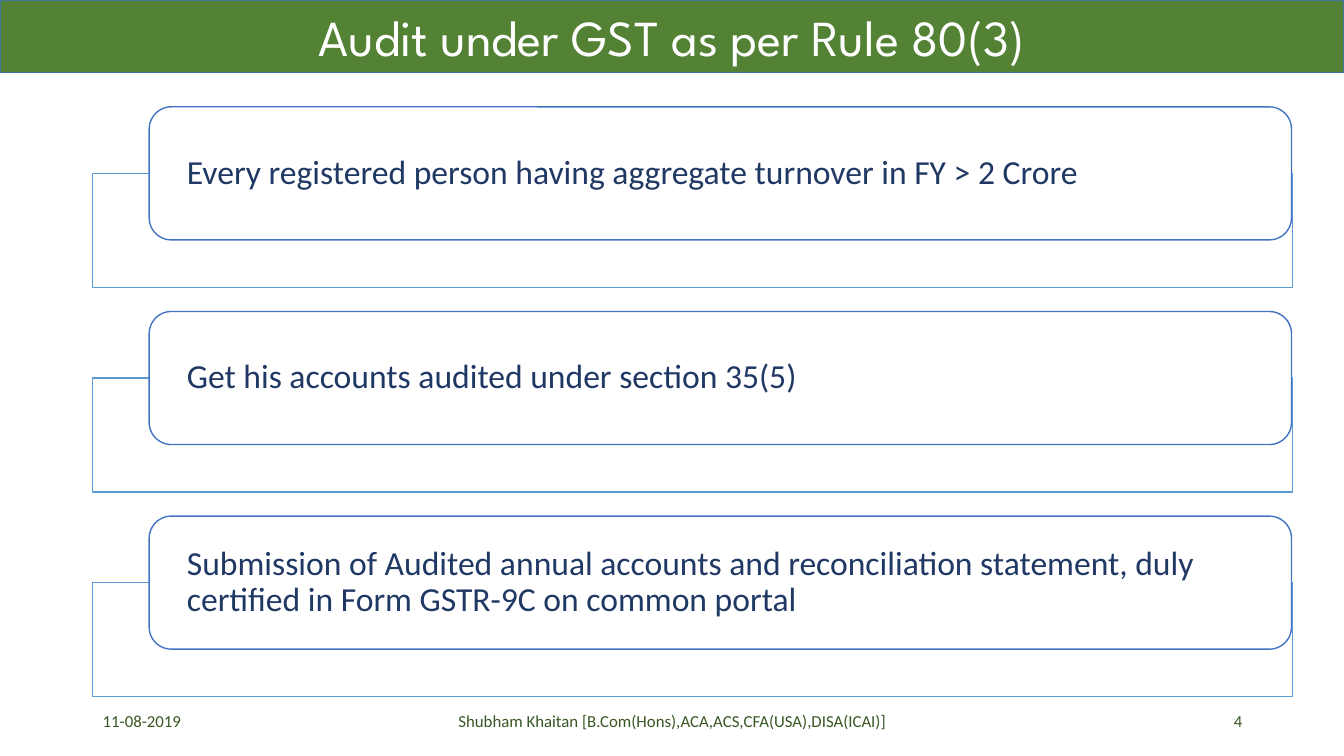
"""Build the slide on audit under GST as per Rule 80(3)."""
from dataclasses import dataclass

from lxml.etree import SubElement
from pptx import Presentation
from pptx.dml.color import RGBColor
from pptx.enum.shapes import MSO_SHAPE
from pptx.enum.text import MSO_ANCHOR, PP_ALIGN
from pptx.oxml.ns import qn
from pptx.shapes.autoshape import Shape
from pptx.slide import Slide
from pptx.util import Inches, Pt

COLOURS = {
    "white": "FFFFFF",
    "banner": "548235",
    "banner_line": "43739E",
    "frame_line": "5B9BD5",
    "card_line": "4472C4",
    "card_text": "203864",
    "footer_text": "385723",
}
CARD_TOP = 1.06
CARD_PITCH = 2.03
FRAME_DROP = 0.66
REQUIREMENTS = [
    "Every registered person having aggregate turnover in FY > 2 Crore",
    "Get his accounts audited under section 35(5)",
    "Submission of Audited annual accounts and reconciliation statement, "
    "duly certified in Form GSTR-9C on common portal",
]


@dataclass
class Area:
    left: float
    top: float
    width: float
    height: float


@dataclass
class TextStyle:
    font: str
    size: float
    colour: str
    align: PP_ALIGN


@dataclass
class FooterItem:
    text: str
    left: float
    width: float
    align: PP_ALIGN


FOOTER = [
    FooterItem("11-08-2019", 0.92, 3, PP_ALIGN.LEFT),
    FooterItem("Shubham Khaitan [B.Com(Hons),ACA,ACS,CFA(USA),DISA(ICAI)]", 4.42, 4.5, PP_ALIGN.CENTER),
    FooterItem("4", 9.42, 3, PP_ALIGN.RIGHT),
]


def rgb(name: str) -> RGBColor:
    return RGBColor.from_string(COLOURS[name])


def write(box: Shape, text: str, style: TextStyle) -> None:
    frame = box.text_frame
    frame.word_wrap = True
    frame.vertical_anchor = MSO_ANCHOR.MIDDLE
    frame.text = text
    para = frame.paragraphs[0]
    para.alignment = style.align
    for span in para.runs:
        span.font.name = style.font
        span.font.size = Pt(style.size)
        span.font.color.rgb = rgb(style.colour)


def add_panel(page: Slide, kind: MSO_SHAPE, area: Area, fill: str, line: str) -> Shape:
    panel = page.shapes.add_shape(
        kind, Inches(area.left), Inches(area.top), Inches(area.width), Inches(area.height)
    )
    panel.shadow.inherit = False
    panel.fill.solid()
    panel.fill.fore_color.rgb = rgb(fill)
    panel.line.color.rgb = rgb(line)
    panel.line.width = Pt(1)
    return panel


def add_footer_item(page: Slide, item: FooterItem) -> None:
    box = page.shapes.add_textbox(Inches(item.left), Inches(6.95), Inches(item.width), Inches(0.4))
    write(box, item.text, TextStyle("Calibri", 12, "footer_text", item.align))


def add_requirement(page: Slide, text: str, top: float) -> None:
    frame_area = Area(0.92, top + FRAME_DROP, 11.9, 1.13)
    frame = add_panel(page, MSO_SHAPE.RECTANGLE, frame_area, "white", "frame_line")
    fill_colour = frame.fill._xPr.find(qn("a:solidFill"))[0]
    SubElement(fill_colour, qn("a:alpha"), val="90000")

    card_area = Area(1.48, top, 11.33, 1.32)
    card = add_panel(page, MSO_SHAPE.ROUNDED_RECTANGLE, card_area, "white", "card_line")
    write(card, text, TextStyle("Calibri", 24, "card_text", PP_ALIGN.LEFT))
    card.text_frame.margin_left = card.text_frame.margin_right = Inches(0.31)
    card.text_frame.margin_top = card.text_frame.margin_bottom = 0
    card.text_frame.paragraphs[0].line_spacing = 0.9


def main() -> None:
    deck = Presentation()
    deck.slide_width = Inches(13.33)
    deck.slide_height = Inches(7.5)
    page = deck.slides.add_slide(deck.slide_layouts[6])

    for item in FOOTER:
        add_footer_item(page, item)

    banner = add_panel(page, MSO_SHAPE.RECTANGLE, Area(0, 0, 13.33, 0.72), "banner", "banner_line")
    title_style = TextStyle("League Spartan", 36, "white", PP_ALIGN.CENTER)
    write(banner, "Audit under GST as per Rule 80(3)", title_style)

    for index, text in enumerate(REQUIREMENTS):
        add_requirement(page, text, CARD_TOP + index * CARD_PITCH)

    deck.save("out.pptx")


if __name__ == "__main__":
    main()
